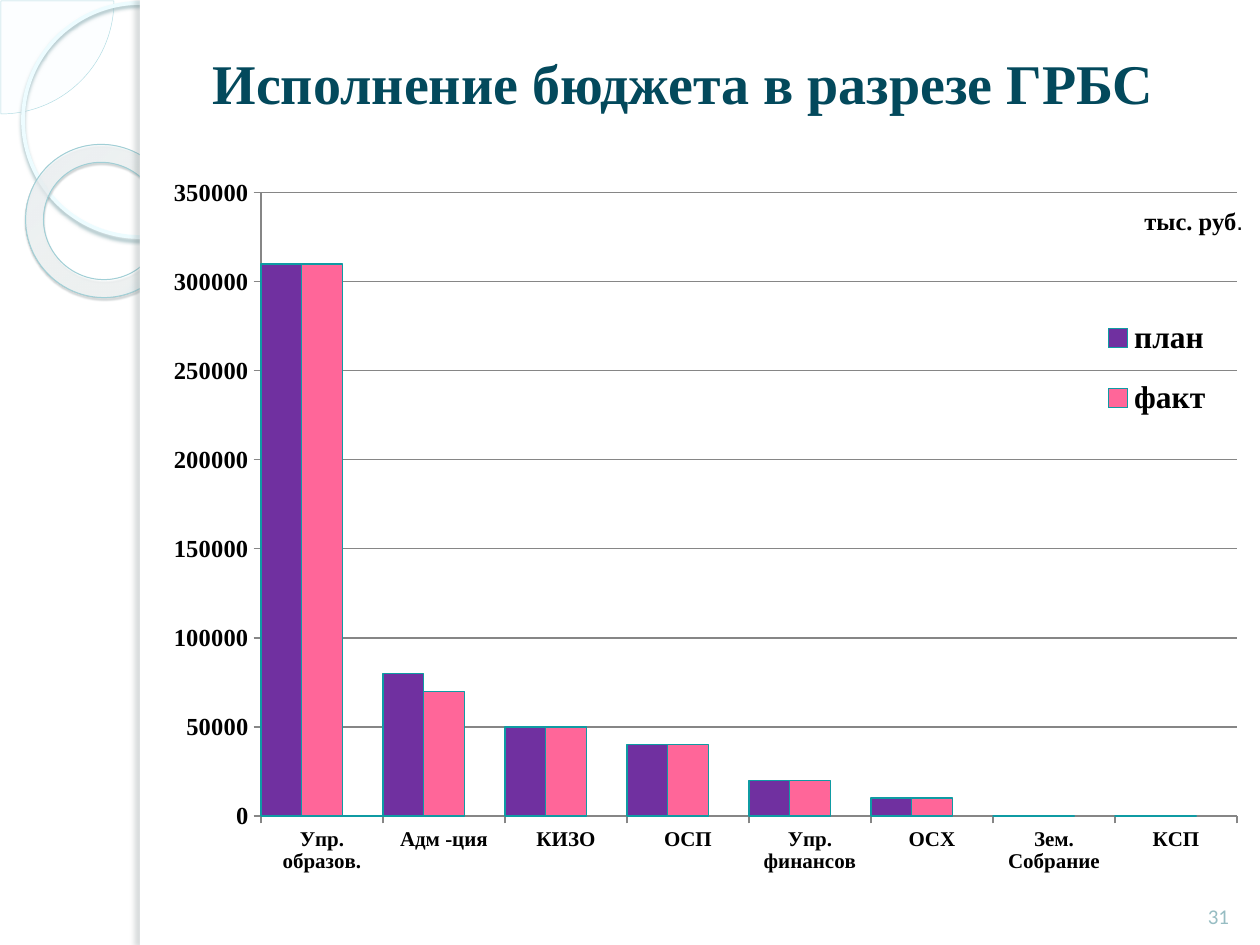
from lxml import etree
from pptx import Presentation
from pptx.chart.data import CategoryChartData
from pptx.dml.color import RGBColor
from pptx.enum.chart import XL_CHART_TYPE as ChartType, XL_LEGEND_POSITION as LegendPos, XL_TICK_MARK as Tick
from pptx.enum.shapes import MSO_SHAPE as Shape
from pptx.enum.text import MSO_ANCHOR as Anchor, PP_ALIGN as Align
from pptx.oxml import parse_xml
from pptx.oxml.ns import nsdecls, qn
from pptx.util import Emu, Pt

SERIF = "Times New Roman"
TITLE = "Исполнение бюджета в разрезе ГРБС"
UNIT = [("тыс. руб", SERIF, True), (".", "Arial", False)]
PAGE = "31"
DEPARTMENTS = ["Упр. образов.", "Адм -ция", "КИЗО", "ОСП",
               "Упр. финансов", "ОСХ", "Зем. Собрание", "КСП"]
SERIES = [
    ("план", "7030A0", (310000, 80000, 50000, 40000, 20000, 10000, 0, 0)),
    ("факт", "FF6699", (310000, 70000, 50000, 40000, 20000, 10000, 0, 0)),
    ("Series 3", "0BD0D9", (0,)),
]
CHART_BOX = (136, 179, 1102, 724)
PLOT_BOX = (125, 13, 976, 624)
LEGEND_BOX = (955, 116, 132, 145)
RING_STOPS = [(0, "F9FEFF", 70), (70, "FDFFFF", 55), (100, "9EF2FF", 60)]
RING_FOCUS = {"l": -408, "t": -50, "r": 508, "b": 150}
DECOR = [
    dict(kind=Shape.PIE, box=(-112, -112, 226, 226), adjust=(0, 54.02),
         fill="F8FEFF", alpha=33, line=("AFDBE2", 0.25)),
    dict(kind=Shape.OVAL, box=(23, 3, 234, 234), line=("EDFCFF", 2.15),
         shadow=("9CB9BE", 85, 2, 2, 90)),
    dict(kind=Shape.DONUT, box=(25, 145, 155, 152), adjust=(0.118,), turn=38.6,
         stops=RING_STOPS, line=("A1CFD6", 0.58), shadow=("4B5E61", 35, 1, 1.2, 75)),
    dict(kind=Shape.RECTANGLE, box=(140, 0, 1120, 945), fill="FFFFFF"),
    dict(kind=Shape.RECTANGLE, box=(140, 0, 10, 945), fill="FFFFFF",
         shadow=("6C7A7C", 25, 3, 3, 180)),
]


def px(n):
    return Emu(round(n * 914400 / 126))


def rgb(value):
    return RGBColor.from_string(value)


def add(parent, tag, **attributes):
    child = etree.SubElement(parent, qn(tag))
    for key, value in attributes.items():
        child.set(key, str(value))
    return child


def add_color(parent, color, alpha):
    add(add(parent, "a:srgbClr", val=color), "a:alpha", val=alpha * 1000)


def fill_ring(shape, stops):
    shape.fill.gradient()
    gradient = shape._element.spPr.find(qn("a:gradFill"))
    for child in list(gradient):
        gradient.remove(child)
    stop_list = add(gradient, "a:gsLst")
    for position, color, alpha in stops:
        add_color(add(stop_list, "a:gs", pos=position * 1000), color, alpha)
    focus = {side: share * 1000 for side, share in RING_FOCUS.items()}
    add(add(gradient, "a:path", path="circle"), "a:fillToRect", **focus)


def add_decor(slide, kind, box, adjust=(), turn=0, fill=None, alpha=100,
              stops=None, line=None, shadow=None):
    shape = slide.shapes.add_shape(kind, *map(px, box))
    shape.rotation = turn
    for index, value in enumerate(adjust):
        shape.adjustments[index] = value
    if stops:
        fill_ring(shape, stops)
    elif fill:
        shape.fill.solid()
        shape.fill.fore_color.rgb = rgb(fill)
        color = shape._element.spPr.find(qn("a:solidFill"))[0]
        add(color, "a:alpha", val=alpha * 1000)
    else:
        shape.fill.background()
    if line:
        shape.line.color.rgb, shape.line.width = rgb(line[0]), Pt(line[1])
    else:
        shape.line.fill.background()
    shape.shadow.inherit = False
    if shadow:
        color, opacity, blur, distance, angle = shadow
        effects = shape._element.spPr.find(qn("a:effectLst"))
        outer = add(effects, "a:outerShdw", blurRad=Pt(blur), dist=Pt(distance),
                    dir=angle * 60000, algn="tl", rotWithShape=0)
        add_color(outer, color, opacity)


def style(font, size, name=SERIF, color="000000", bold=True):
    font.size, font.name, font.bold = Pt(size), name, bold
    font.color.rgb = rgb(color)


def add_text(slide, box, parts, size, color, anchor, align, wrap=True):
    frame = slide.shapes.add_textbox(*map(px, box)).text_frame
    frame.word_wrap, frame.vertical_anchor = wrap, anchor
    paragraph = frame.paragraphs[0]
    paragraph.alignment = align
    for words, name, bold in parts:
        run = paragraph.add_run()
        run.text = words
        style(run.font, size, name, color, bold)


def set_layout(parent, index, box, inner=False):
    for old in parent.findall(qn("c:layout")):
        parent.remove(old)
    layout = parse_xml(f"<c:layout {nsdecls('c')}/>")
    manual = add(layout, "c:manualLayout")
    if inner:
        add(manual, "c:layoutTarget", val="inner")
    for mode in ("xMode", "yMode"):
        add(manual, f"c:{mode}", val="edge")
    for key, length, whole in zip("xywh", box, CHART_BOX[2:] * 2):
        add(manual, f"c:{key}", val=length / whole)
    parent.insert(index, layout)


def add_budget_chart(slide):
    data = CategoryChartData()
    data.categories = DEPARTMENTS
    for name, _, values in SERIES:
        data.add_series(name, values)
    chart = slide.shapes.add_chart(
        ChartType.COLUMN_CLUSTERED, *map(px, CHART_BOX), data).chart
    chart.has_title = False
    style(chart.font, 18, "Calibri", bold=False)
    plot = chart.plots[0]
    plot.gap_width, plot.overlap, plot.vary_by_categories = 0, 0, False
    for series, (_, color, _) in zip(plot.series, SERIES):
        series.format.fill.solid()
        series.format.fill.fore_color.rgb = rgb(color)
        series.format.line.color.rgb = rgb("0F9BA3")
        series.format.line.width = Pt(0.75)
    amounts = chart.value_axis
    amounts.minimum_scale, amounts.maximum_scale, amounts.major_unit = 0, 350000, 50000
    amounts.has_major_gridlines = True
    for axis, size in ((chart.category_axis, 12), (amounts, 14)):
        axis.major_tick_mark = Tick.OUTSIDE
        style(axis.tick_labels.font, size)
    for part in (chart.category_axis, amounts, amounts.major_gridlines):
        part.format.line.color.rgb = rgb("868686")
        part.format.line.width = Pt(0.75)
    set_layout(chart._chartSpace.chart.plotArea, 0, PLOT_BOX, inner=True)
    chart.has_legend = True
    legend = chart.legend
    legend.position, legend.include_in_layout = LegendPos.RIGHT, False
    style(legend.font, 18)
    set_layout(legend._element, 1, LEGEND_BOX)
    hidden = parse_xml(f"<c:legendEntry {nsdecls('c')}/>")
    add(hidden, "c:idx", val=2)
    add(hidden, "c:delete", val=1)
    legend._element.insert(1, hidden)


def main():
    deck = Presentation()
    deck.slide_width, deck.slide_height = px(1260), px(945)
    slide = deck.slides.add_slide(deck.slide_layouts[6])
    for item in DECOR:
        add_decor(slide, **item)
    add_text(slide, (136, 38, 1095, 88), [(TITLE, SERIF, True)], 32, "03495C",
             Anchor.MIDDLE, Align.CENTER)
    add_budget_chart(slide)
    add_text(slide, (1187, 869, 63, 66), [(PAGE, "Calibri", False)], 12, "97BDC3",
             Anchor.BOTTOM, Align.CENTER)
    add_text(slide, (1132, 200, 125, 43), UNIT, 14, "000000",
             Anchor.TOP, Align.LEFT, wrap=False)
    deck.save("out.pptx")


if __name__ == "__main__":
    main()
